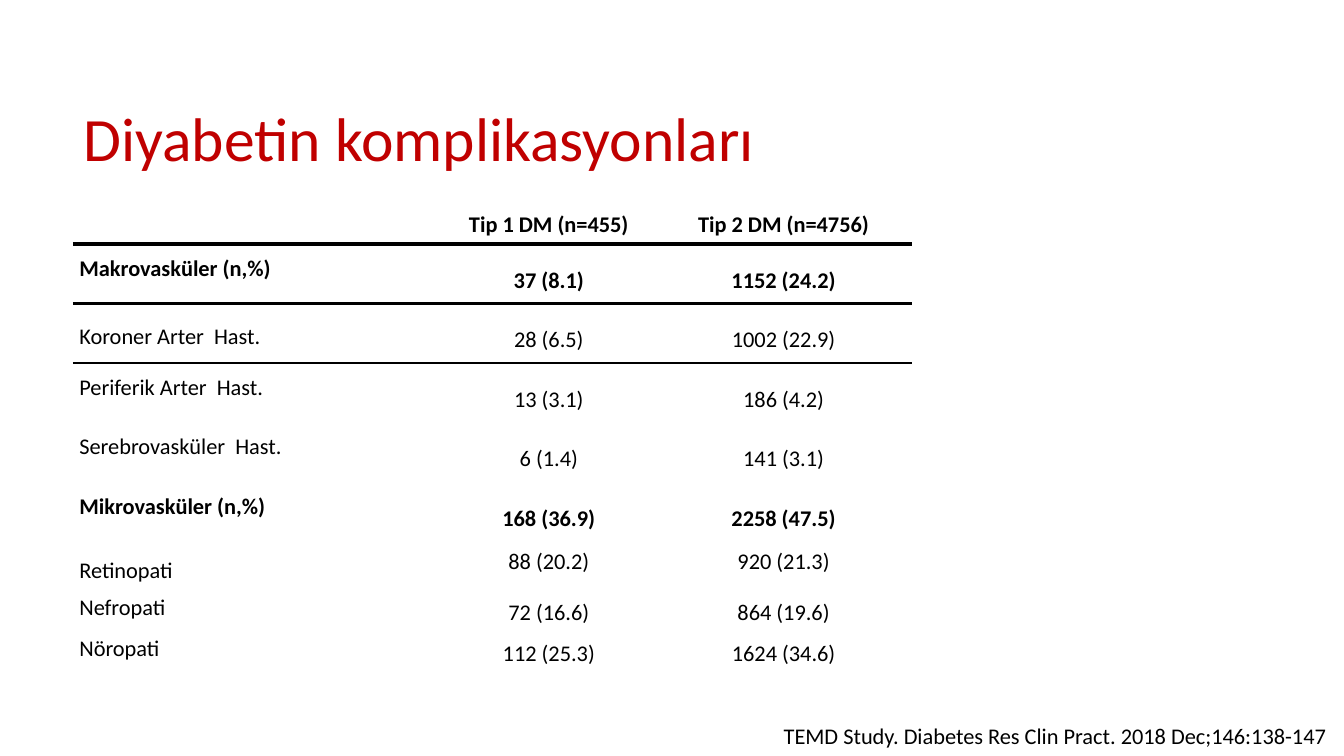
from dataclasses import dataclass

from lxml import etree
from pptx import Presentation
from pptx import util as u
from pptx.dml.color import RGBColor
from pptx.enum import text
from pptx.oxml import ns


@dataclass(frozen=True)
class Theme:
    font: str = "Calibri"
    heading: str = "C00000"
    ink: str = "000000"
    heading_size: int = 44
    body_size: int = 16
    line_pitch: int = 12


@dataclass(frozen=True)
class Box:
    left: float
    top: float
    width: float
    height: float

    def lengths(self):
        return [u.Cm(v) for v in (self.left, self.top, self.width, self.height)]


THEME = Theme()
COLUMN_SHARES = (0.44, 0.254, 0.306)
HEADINGS = ("", "Tip 1 DM (n=455)", "Tip 2 DM (n=4756)")
HEADING_HEIGHT = 1.17
RULES_BELOW = {0: 3, 1: 2.25}

# label, type 1, type 2, row height, label drop in lines, value drop in lines, bold
COMPLICATIONS = (
    ("Makrovasküler (n,%)", "37 (8.1)", "1152 (24.2)", 1.5, 0, 2, True),
    ("Koroner Arter  Hast.", "28 (6.5)", "1002 (22.9)", 1.5, 1, 2, False),
    ("Periferik Arter  Hast.", "13 (3.1)", "186 (4.2)", 1.5, 0, 2, False),
    ("Serebrovasküler  Hast.", "6 (1.4)", "141 (3.1)", 1.5, 0, 2, False),
    ("Mikrovasküler (n,%)", "168 (36.9)", "2258 (47.5)", 1.5, 0, 2, True),
    ("Retinopati", "88 (20.2)", "920 (21.3)", 1.3, 1, 1, False),
    ("Nefropati", "72 (16.6)", "864 (19.6)", 1.02, 0, 1, False),
    ("Nöropati", "112 (25.3)", "1624 (34.6)", 1.02, 0, 1, False),
)


def style(paragraph, size, color, bold=False):
    for run in paragraph.runs:
        run.font.name = THEME.font
        run.font.size = u.Pt(size)
        run.font.bold = bold
        run.font.color.rgb = RGBColor.from_string(color)


def add_rule(cell, side, points):
    rule = etree.Element(ns.qn(f"a:{side}"), w=str(int(u.Pt(points))))
    fill = etree.SubElement(rule, ns.qn("a:solidFill"))
    etree.SubElement(fill, ns.qn("a:srgbClr"), val=THEME.ink)
    cell._tc.get_or_add_tcPr().insert(0, rule)


def fill_cell(cell, words, bold, spacing, centred, drop=0):
    cell.fill.background()
    cell.margin_left = cell.margin_right = u.Cm(0.15)
    cell.margin_top = u.Pt(drop * THEME.line_pitch)
    cell.margin_bottom = 0
    cell.vertical_anchor = text.MSO_ANCHOR.TOP if centred else text.MSO_ANCHOR.MIDDLE
    if words:
        cell.text_frame.text = words
        paragraph = cell.text_frame.paragraphs[0]
        paragraph.alignment = text.PP_ALIGN.CENTER if centred else text.PP_ALIGN.LEFT
        paragraph.line_spacing = spacing
        style(paragraph, THEME.body_size, THEME.ink, bold)


def place_title(slide, box):
    title = slide.shapes.title
    title.left, title.top, title.width, title.height = box.lengths()
    frame = title.text_frame
    frame.text = "Diyabetin komplikasyonları"
    frame.vertical_anchor = text.MSO_ANCHOR.MIDDLE
    heading = frame.paragraphs[0]
    heading.alignment = text.PP_ALIGN.LEFT
    heading.line_spacing = 0.9
    style(heading, THEME.heading_size, THEME.heading)


def place_complications(slide, box):
    row_count = len(COMPLICATIONS) + 1
    table = slide.shapes.add_table(row_count, len(HEADINGS), *box.lengths()).table
    table.first_row = table.horz_banding = False
    for column, share in zip(table.columns, COLUMN_SHARES):
        column.width = u.Cm(box.width * share)

    table.rows[0].height = u.Cm(HEADING_HEIGHT)
    for column, words in enumerate(HEADINGS):
        fill_cell(table.cell(0, column), words, True, 1.5, True)

    for row, (*entries, height, label_drop, value_drop, bold) in enumerate(COMPLICATIONS, 1):
        table.rows[row].height = u.Cm(height)
        for column, words in enumerate(entries):
            is_value = column > 0
            drop = value_drop if is_value else label_drop
            fill_cell(table.cell(row, column), words, bold,
                      u.Pt(THEME.line_pitch), is_value, drop)

    for row, points in RULES_BELOW.items():
        for column in range(len(HEADINGS)):
            add_rule(table.cell(row, column), "lnB", points)
            add_rule(table.cell(row + 1, column), "lnT", points)


def place_citation(slide, box):
    frame = slide.shapes.add_textbox(*box.lengths()).text_frame
    frame.word_wrap = False
    frame.text = "TEMD Study. Diabetes Res Clin Pract. 2018 Dec;146:138-147"
    style(frame.paragraphs[0], THEME.body_size, THEME.ink)


def main():
    deck = Presentation()
    deck.slide_width, deck.slide_height = u.Cm(33.87), u.Cm(19.05)
    slide = deck.slides.add_slide(deck.slide_layouts[5])
    place_title(slide, Box(1.85, 2.16, 21.9, 2.79))
    place_complications(slide, Box(1.85, 4.98, 21.13, 11.84))
    place_citation(slide, Box(19.5, 18.08, 14.36, 0.94))
    deck.save("out.pptx")


if __name__ == "__main__":
    main()
